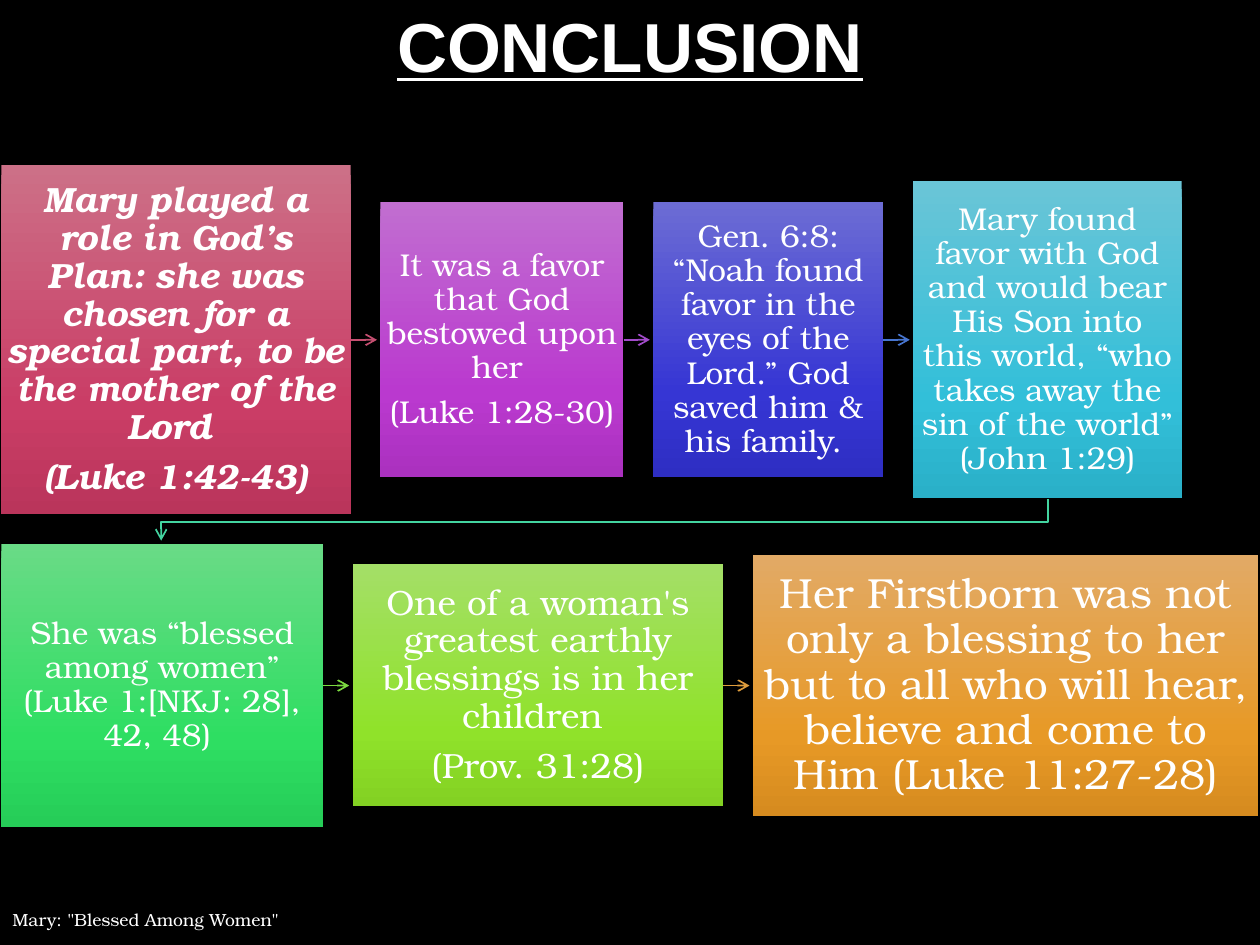
from copy import deepcopy
from dataclasses import dataclass

from lxml.etree import SubElement
from pptx import Presentation
from pptx.dml.color import RGBColor
from pptx.enum.shapes import MSO_CONNECTOR as Connector
from pptx.enum.shapes import MSO_SHAPE as Shape
from pptx.enum.text import MSO_ANCHOR as Anchor
from pptx.enum.text import MSO_AUTO_SIZE as AutoSize
from pptx.enum.text import PP_ALIGN as Align
from pptx.oxml.ns import qn
from pptx.util import Cm, Pt

BODY_FONT = "TeX Gyre Bonum"
ROW_LEFT = 0.03
GAP = 0.6
ARROW_LENGTH = 0.53
LINE_SPACING = 0.9

COLORS = {
    "background": "000000",
    "text": "FFFFFF",
    "rose": "C54F71",
    "purple": "A24BCA",
    "blue": "4775CF",
    "teal": "43D4A0",
    "green": "7BD940",
    "orange": "DE9C3C",
}
# Top, 69 % and bottom colour of each box
GRADIENTS = {
    "rose": ("CC7087", "CA3D66", "BA355B"),
    "purple": ("C16ED0", "BA39CF", "AB31BF"),
    "blue": ("6C6CD4", "3636D4", "2E2EC3"),
    "cyan": ("6AC5D7", "32BFD9", "2AB0C8"),
    "green": ("69DB86", "2EDE62", "26CD58"),
    "lime": ("A4DF67", "90E22A", "83D123"),
    "orange": ("E2AA66", "E79926", "D68B1F"),
}
STOP_POSITIONS = (0, 0.69, 1)


@dataclass
class Step:
    width: float
    height: float
    gradient: str
    text: str
    size: int = 18
    emphasis: bool = False
    arrow: str = ""


@dataclass
class Row:
    middle: float
    steps: list[Step]


ROWS = [
    Row(6.85, [
        Step(7.04, 7.04, "rose",
             "Mary played a role in God’s Plan: she was chosen for a special part, "
             "to be the mother of the Lord \n(Luke 1:42-43)",
             size=20, emphasis=True, arrow="rose"),
        Step(4.9, 5.54, "purple",
             "It was a favor that God bestowed upon her \n(Luke 1:28-30) ", arrow="purple"),
        Step(4.64, 5.54, "blue",
             "Gen. 6:8: “Noah found favor in the eyes of the Lord.” "
             "God saved him & his family. ", arrow="blue"),
        Step(5.41, 6.4, "cyan",
             "Mary found favor with God and would bear His Son into this world, "
             "“who takes away the sin of the world” (John 1:29)"),
    ]),
    Row(13.82, [
        Step(6.48, 5.69, "green",
             "She was “blessed among women” (Luke 1:[NKJ: 28], 42, 48) ", arrow="green"),
        Step(7.47, 4.88, "lime",
             "One of a woman's greatest earthly blessings is in her children \n(Prov. 31:28)",
             size=20, arrow="orange"),
        Step(10.19, 5.28, "orange",
             "Her Firstborn was not only a blessing to her but to all who will hear, "
             "believe and come to Him (Luke 11:27-28)", size=24),
    ]),
]


def rgb(name: str) -> RGBColor:
    return RGBColor.from_string(COLORS[name])


def style_font(font, name: str, size: float) -> None:
    font.name = name
    font.size = Pt(size)
    font.color.rgb = rgb("text")


def fill_gradient(shape, colors: tuple[str, str, str]) -> None:
    shape.fill.gradient()
    shape.fill.gradient_angle = 270
    stop_list = shape.element.spPr.find(".//" + qn("a:gsLst"))
    stop_list.append(deepcopy(stop_list[-1]))
    for stop, position, color in zip(shape.fill.gradient_stops, STOP_POSITIONS, colors):
        stop.position = position
        stop.color.rgb = RGBColor.from_string(color)


def add_box(slide, step: Step, left: float, middle: float) -> None:
    shape = slide.shapes.add_shape(
        Shape.RECTANGLE, Cm(left), Cm(middle - step.height / 2), Cm(step.width), Cm(step.height))
    shape.shadow.inherit = False
    shape.line.fill.background()
    fill_gradient(shape, GRADIENTS[step.gradient])

    frame = shape.text_frame
    frame.word_wrap = True
    frame.vertical_anchor = Anchor.MIDDLE
    frame.margin_left = frame.margin_right = Cm(0.13)
    frame.margin_top = frame.margin_bottom = Cm(0.13)
    frame.text = step.text
    for paragraph in frame.paragraphs:
        paragraph.alignment = Align.CENTER
        paragraph.line_spacing = LINE_SPACING
        paragraph.space_after = Pt(0.35 * step.size)
        for run in paragraph.runs:
            style_font(run.font, BODY_FONT, step.size)
            run.font.bold = run.font.italic = step.emphasis


def style_arrow(arrow, color: str) -> None:
    arrow.line.color.rgb = rgb(color)
    arrow.line.width = Pt(1)
    SubElement(arrow.line._get_or_add_ln(), qn("a:tailEnd"), type="arrow")
    SubElement(arrow._element.spPr, qn("a:effectLst"))


def add_arrow(slide, left: float, middle: float, color: str) -> None:
    arrow = slide.shapes.add_connector(
        Connector.STRAIGHT, Cm(left), Cm(middle), Cm(left + ARROW_LENGTH), Cm(middle))
    style_arrow(arrow, color)


def add_row_link(slide, points: list[tuple[float, float]], color: str) -> None:
    start, *others = [(Cm(x), Cm(y)) for x, y in points]
    builder = slide.shapes.build_freeform(*start)
    builder.add_line_segments(others, close=False)
    link = builder.convert_to_shape()
    link.fill.background()
    style_arrow(link, color)


def add_row(slide, row: Row) -> None:
    left = ROW_LEFT
    for step in row.steps:
        add_box(slide, step, left, row.middle)
        if step.arrow:
            add_arrow(slide, left + step.width, row.middle, step.arrow)
        left += step.width + GAP


def main() -> None:
    presentation = Presentation()
    presentation.slide_width = Cm(25.4)
    presentation.slide_height = Cm(19.05)
    slide = presentation.slides.add_slide(presentation.slide_layouts[5])
    slide.background.fill.solid()
    slide.background.fill.fore_color.rgb = rgb("background")

    # Title
    title = slide.shapes.title
    title.left, title.top, title.width, title.height = Cm(0), Cm(0.05), Cm(25.4), Cm(1.9)
    frame = title.text_frame
    frame.text = "CONCLUSION"
    frame.auto_size = AutoSize.NONE
    frame.vertical_anchor = Anchor.MIDDLE
    paragraph = frame.paragraphs[0]
    paragraph.alignment = Align.CENTER
    paragraph.line_spacing = LINE_SPACING
    font = paragraph.runs[0].font
    style_font(font, "Arial", 39.6)
    font.bold = font.underline = True

    # Two rows of steps, joined by a bent arrow
    for row in ROWS:
        add_row(slide, row)
    add_row_link(slide, [(21.13, 10.06), (21.13, 10.52), (3.25, 10.52), (3.25, 10.9)], "teal")

    # Lesson name
    footer = slide.shapes.add_textbox(Cm(0), Cm(18.03), Cm(13.89), Cm(1.02))
    frame = footer.text_frame
    frame.word_wrap = True
    frame.vertical_anchor = Anchor.MIDDLE
    frame.text = 'Mary: "Blessed Among Women"'
    frame.paragraphs[0].space_after = Pt(6)
    style_font(frame.paragraphs[0].runs[0].font, BODY_FONT, 10)

    presentation.save("out.pptx")


if __name__ == "__main__":
    main()
